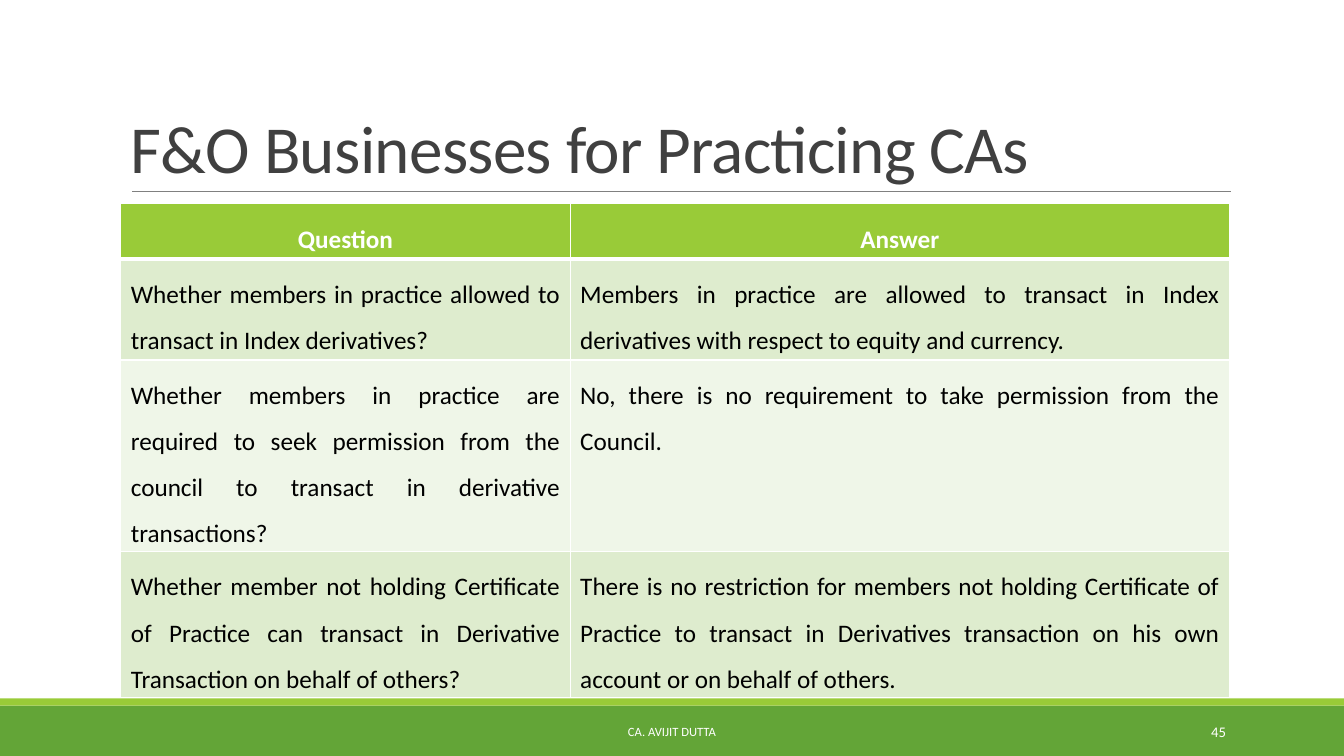
from dataclasses import dataclass
from lxml.etree import SubElement
from pptx import Presentation
from pptx.dml.color import RGBColor
from pptx.enum.shapes import MSO_CONNECTOR, MSO_SHAPE
from pptx.enum.text import MSO_ANCHOR, PP_ALIGN
from pptx.oxml import parse_xml
from pptx.oxml.ns import nsdecls, qn
from pptx.util import Pt


@dataclass(frozen=True)
class Theme:
    font: str = "Calibri"
    green: str = "63A537"
    lime: str = "99CB38"
    rule: str = "808080"
    title: str = "404040"
    white: str = "FFFFFF"
    black: str = "000000"
    bands: tuple[str, str] = ("DEECCE", "EFF6E8")
    head_size: float = 48
    body_size: float = 18
    foot_size: float = 9
    page_size: float = 10.5


@dataclass(frozen=True)
class Box:
    left: int
    top: int
    width: int
    height: int

    def emu(self) -> tuple[int, ...]:
        return tuple(map(px, (self.left, self.top, self.width, self.height)))


@dataclass(frozen=True)
class Band:
    box: Box
    color: str


@dataclass(frozen=True)
class Style:
    size: float
    color: str
    align: PP_ALIGN = PP_ALIGN.LEFT
    bold: bool = False
    lines: float = 1.0
    track: int = 0


@dataclass(frozen=True)
class Label:
    box: Box
    text: str
    style: Style
    anchor: MSO_ANCHOR = MSO_ANCHOR.MIDDLE


THEME = Theme()
SCALE = 9525  # EMU in one px, 96 px to the inch

BANDS = [
    Band(Box(0, 672, 1280, 48), THEME.green),
    Band(Box(0, 665, 1280, 7), THEME.lime),
]
LABELS = [
    Label(Box(115, 30, 1056, 153), "F&O Businesses for Practicing CAs",
          Style(THEME.head_size, THEME.title, lines=0.85, track=-50),
          MSO_ANCHOR.BOTTOM),
    Label(Box(387, 678, 506, 38), "CA. AVIJIT DUTTA",
          Style(THEME.foot_size, THEME.white, PP_ALIGN.CENTER)),
    Label(Box(1040, 678, 137, 38), "45",
          Style(THEME.page_size, THEME.white, PP_ALIGN.RIGHT)),
]
HEAD = Style(THEME.body_size, THEME.white, PP_ALIGN.CENTER, True, 1.5)
BODY = Style(THEME.body_size, THEME.black, PP_ALIGN.JUSTIFY, False, 1.5)
COLS = (428, 628)
ROW = 39
ROWS = [
    ("Question", "Answer"),
    ("Whether members in practice allowed to transact in Index derivatives?",
     "Members in practice are allowed to transact in Index derivatives with "
     "respect to equity and currency."),
    ("Whether members in practice are required to seek permission from the "
     "council to transact in derivative transactions?",
     "No, there is no requirement to take permission from the Council."),
    ("Whether member not holding Certificate of Practice can transact in "
     "Derivative Transaction on behalf of others?",
     "There is no restriction for members not holding Certificate of Practice "
     "to transact in Derivatives transaction on his own account or on behalf "
     "of others."),
]


def px(count: int) -> int:
    return count * SCALE


def write(frame, text: str, style: Style) -> None:
    para = frame.paragraphs[0]
    para.alignment = style.align
    para.line_spacing = style.lines
    run = para.add_run()
    run.text = text
    form = {"name": THEME.font, "size": Pt(style.size), "bold": style.bold}
    for key, value in form.items():
        setattr(run.font, key, value)
    run.font.color.rgb = RGBColor.from_string(style.color)
    if style.track:
        run._r.get_or_add_rPr().set("spc", str(style.track))


def draw_band(slide, band: Band) -> None:
    shape = slide.shapes.add_shape(MSO_SHAPE.RECTANGLE, *band.box.emu())
    shape.shadow.inherit = False
    shape.fill.solid()
    shape.fill.fore_color.rgb = RGBColor.from_string(band.color)
    shape.line.fill.background()


def draw_rule(slide, left: int, right: int, top: int) -> None:
    line = slide.shapes.add_connector(
        MSO_CONNECTOR.STRAIGHT, px(left), px(top), px(right), px(top))
    line.line.color.rgb = RGBColor.from_string(THEME.rule)
    line.line.width = Pt(0.5)
    SubElement(line._element.spPr, qn("a:effectLst"))


def draw_label(slide, label: Label) -> None:
    frame = slide.shapes.add_textbox(*label.box.emu()).text_frame
    form = {"word_wrap": True, "vertical_anchor": label.anchor}
    for key, value in form.items():
        setattr(frame, key, value)
    write(frame, label.text, label.style)


def edge(cell, widths: dict[str, int]) -> None:
    props = cell._tc.get_or_add_tcPr()
    for spot, (side, width) in enumerate(widths.items()):
        props.insert(spot, parse_xml(
            f'<a:ln{side} {nsdecls("a")} w="{Pt(width)}"><a:solidFill>'
            f'<a:srgbClr val="{THEME.white}"/></a:solidFill></a:ln{side}>'))


def draw_table(slide, left: int, top: int) -> None:
    box = Box(left, top, sum(COLS), ROW * len(ROWS))
    table = slide.shapes.add_table(len(ROWS), len(COLS), *box.emu()).table
    for col, width in zip(table.columns, COLS):
        col.width = px(width)
    for r, texts in enumerate(ROWS):
        fill = THEME.bands[(r - 1) % 2] if r else THEME.lime
        for c, text in enumerate(texts):
            cell = table.cell(r, c)
            cell.fill.solid()
            cell.fill.fore_color.rgb = RGBColor.from_string(fill)
            write(cell.text_frame, text, BODY if r else HEAD)
            # Thick edge between the header and the first answer
            edge(cell, {"L": 1, "R": 1, "T": 3 if r == 1 else 1,
                        "B": 3 if r == 0 else 1})


def main() -> None:
    deck = Presentation()
    deck.slide_width, deck.slide_height = px(1280), px(720)
    slide = deck.slides.add_slide(deck.slide_layouts[6])
    # Footer bands and title rule
    for band in BANDS:
        draw_band(slide, band)
    draw_rule(slide, 126, 1172, 182)
    # Title and footer text
    for label in LABELS:
        draw_label(slide, label)
    # Questions and answers
    draw_table(slide, 115, 194)
    deck.save("out.pptx")


if __name__ == "__main__":
    main()
